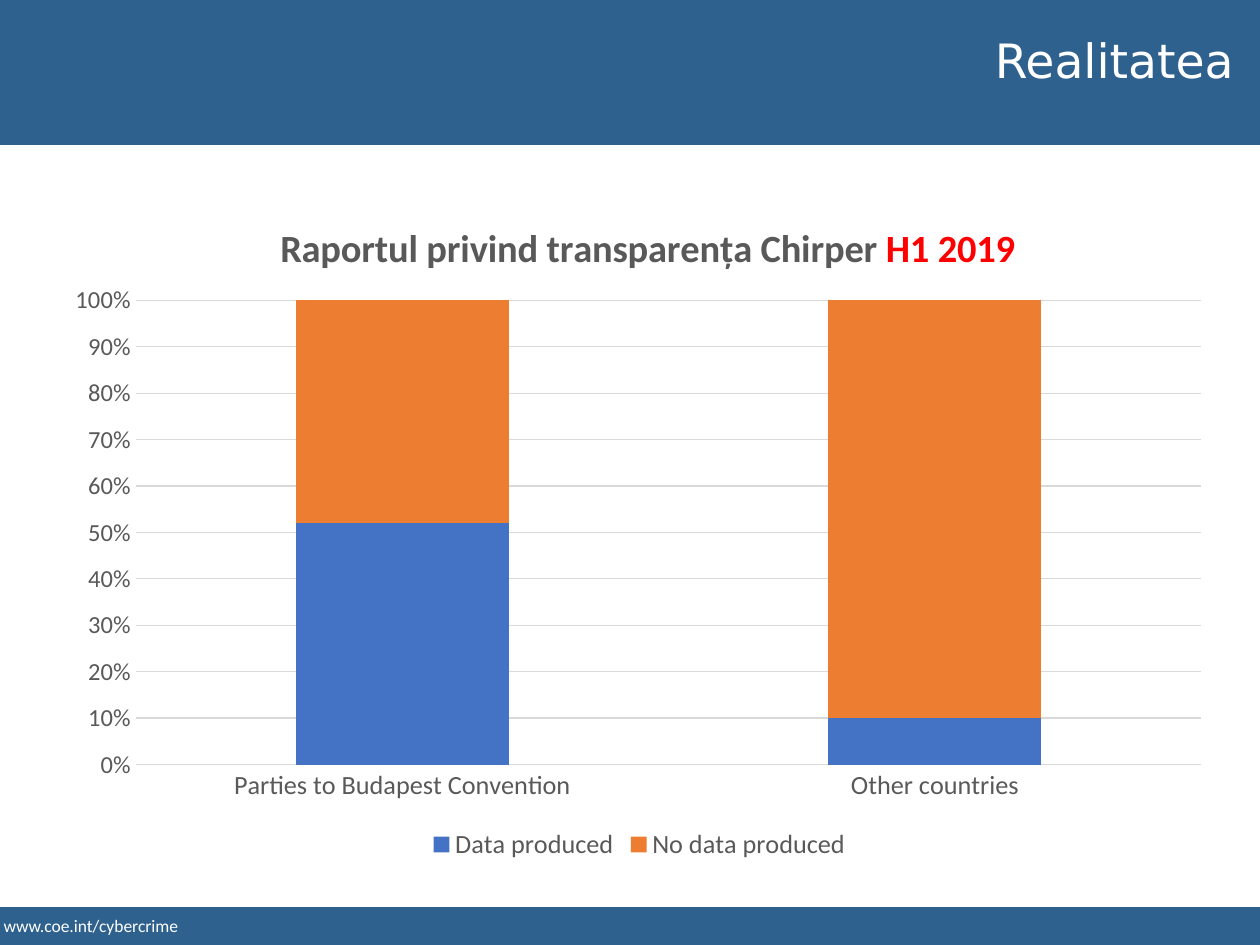
"""Build the transparency report slide with its stacked column chart."""
from dataclasses import dataclass

from lxml import etree
from pptx import Presentation
from pptx.chart.data import CategoryChartData
from pptx.dml.color import RGBColor
from pptx.enum.chart import XL_CHART_TYPE, XL_LEGEND_POSITION, XL_TICK_MARK
from pptx.enum.shapes import MSO_SHAPE
from pptx.enum.text import PP_ALIGN
from pptx.oxml.ns import qn
from pptx.util import Pt

STACKED = XL_CHART_TYPE.COLUMN_STACKED_100
BOTTOM = XL_LEGEND_POSITION.BOTTOM
NO_TICK = XL_TICK_MARK.NONE
RECTANGLE = MSO_SHAPE.RECTANGLE
LEFT, RIGHT = PP_ALIGN.LEFT, PP_ALIGN.RIGHT

BLUE, WHITE, GREY, RED, GRID = "2F618F", "FFFFFF", "595959", "FF0000", "D9D9D9"
BODY_FONT, HEADING_FONT = "Calibri", "DejaVu Sans"


@dataclass(frozen=True)
class Area:
    left: float
    top: float
    width: float
    height: float

    def lengths(self) -> tuple:
        return tuple(Pt(v) for v in (self.left, self.top, self.width, self.height))


@dataclass(frozen=True)
class Label:
    area: Area
    text: str
    size: float
    font: str
    align: PP_ALIGN


@dataclass(frozen=True)
class Series:
    name: str
    values: tuple
    color: str


BANDS = (Area(0, -2.16, 720, 84.96), Area(0, 518.4, 720, 23.04))
LABELS = (
    Label(Area(-5.04, 519.12, 253.44, 19.44), "www.coe.int/cybercrime", 10, BODY_FONT, LEFT),
    Label(Area(99.36, 14.4, 612.72, 41.04), "Realitatea", 27, HEADING_FONT, RIGHT),
)
CHART_AREA = Area(30.96, 110.16, 668.88, 384.48)
CATEGORIES = ("Parties to Budapest Convention", "Other countries")
SERIES = (
    Series("Data produced", (52, 10), "4472C4"),
    Series("No data produced", (48, 90), "ED7D31"),
)
TITLE_SPANS = (("Raportul privind transparența Chirper ", GREY), ("H1 2019", RED))


def rgb(color: str) -> RGBColor:
    return RGBColor.from_string(color)


def style_font(font, size: float, color: str, name: str = BODY_FONT, bold: bool = False) -> None:
    font.size, font.name, font.bold = Pt(size), name, bold
    font.color.rgb = rgb(color)


def style_line(line, color: str) -> None:
    line.color.rgb = rgb(color)
    line.width = Pt(0.75)


def add_band(page, area: Area) -> None:
    band = page.shapes.add_shape(RECTANGLE, *area.lengths())
    band.shadow.inherit = False
    band.fill.solid()
    band.fill.fore_color.rgb = rgb(BLUE)
    band.line.fill.background()


def add_label(page, label: Label) -> None:
    frame = page.shapes.add_textbox(*label.area.lengths()).text_frame
    frame.word_wrap = True
    frame.text = label.text
    para = frame.paragraphs[0]
    para.alignment = label.align
    style_font(para.runs[0].font, label.size, WHITE, label.font)


def place(part, index: int, **settings) -> None:
    layout = part.find(qn("c:layout"))
    if layout is None:
        layout = etree.Element(qn("c:layout"))
        part.insert(index, layout)
    manual = etree.SubElement(layout, qn("c:manualLayout"))
    for tag, value in settings.items():
        etree.SubElement(manual, qn(f"c:{tag}")).set("val", str(value))


def add_title(chart) -> None:
    title = chart.chart_title
    para = title.text_frame.paragraphs[0]
    for text, color in TITLE_SPANS:
        span = para.add_run()
        span.text = text
        style_font(span.font, 22, color, bold=True)
    element = chart._chartSpace.chart.find(qn("c:title"))
    place(element, 1, xMode="edge", yMode="edge", x=0.19, y=0.04)


def style_axes(chart) -> None:
    for axis, size in ((chart.category_axis, 15), (chart.value_axis, 14)):
        axis.major_tick_mark = axis.minor_tick_mark = NO_TICK
        style_font(axis.tick_labels.font, size, GREY)
    style_line(chart.category_axis.format.line, GRID)
    scale = chart.value_axis
    scale.minimum_scale, scale.maximum_scale, scale.major_unit = 0, 1, 0.1
    scale.format.line.fill.background()
    scale.has_major_gridlines = True
    style_line(scale.major_gridlines.format.line, GRID)
    scale.tick_labels.number_format = "0%"
    scale.tick_labels.number_format_is_linked = False


def add_report_chart(page) -> None:
    data = CategoryChartData()
    data.categories = CATEGORIES
    for series in SERIES:
        data.add_series(series.name, series.values)
    chart = page.shapes.add_chart(STACKED, *CHART_AREA.lengths(), data).chart
    style_font(chart.font, 10, "000000")
    add_title(chart)
    style_axes(chart)
    plot = chart.plots[0]
    plot.gap_width, plot.overlap, plot.vary_by_categories = 150, 100, False
    for column, series in zip(plot.series, SERIES):
        column.format.fill.solid()
        column.format.fill.fore_color.rgb = rgb(series.color)
    chart.has_legend = True
    chart.legend.position = BOTTOM
    chart.legend.include_in_layout = False
    style_font(chart.legend.font, 15, GREY)
    place(chart._chartSpace.chart.plotArea, 0, layoutTarget="inner",
          xMode="edge", yMode="edge", x=0.07, y=0.16, w=0.91, h=0.69)


def main() -> None:
    deck = Presentation()
    deck.slide_width, deck.slide_height = Pt(720), Pt(540)
    page = deck.slides.add_slide(deck.slide_layouts[6])
    for area in BANDS:
        add_band(page, area)
    for label in LABELS:
        add_label(page, label)
    add_report_chart(page)
    deck.save("out.pptx")


if __name__ == "__main__":
    main()
